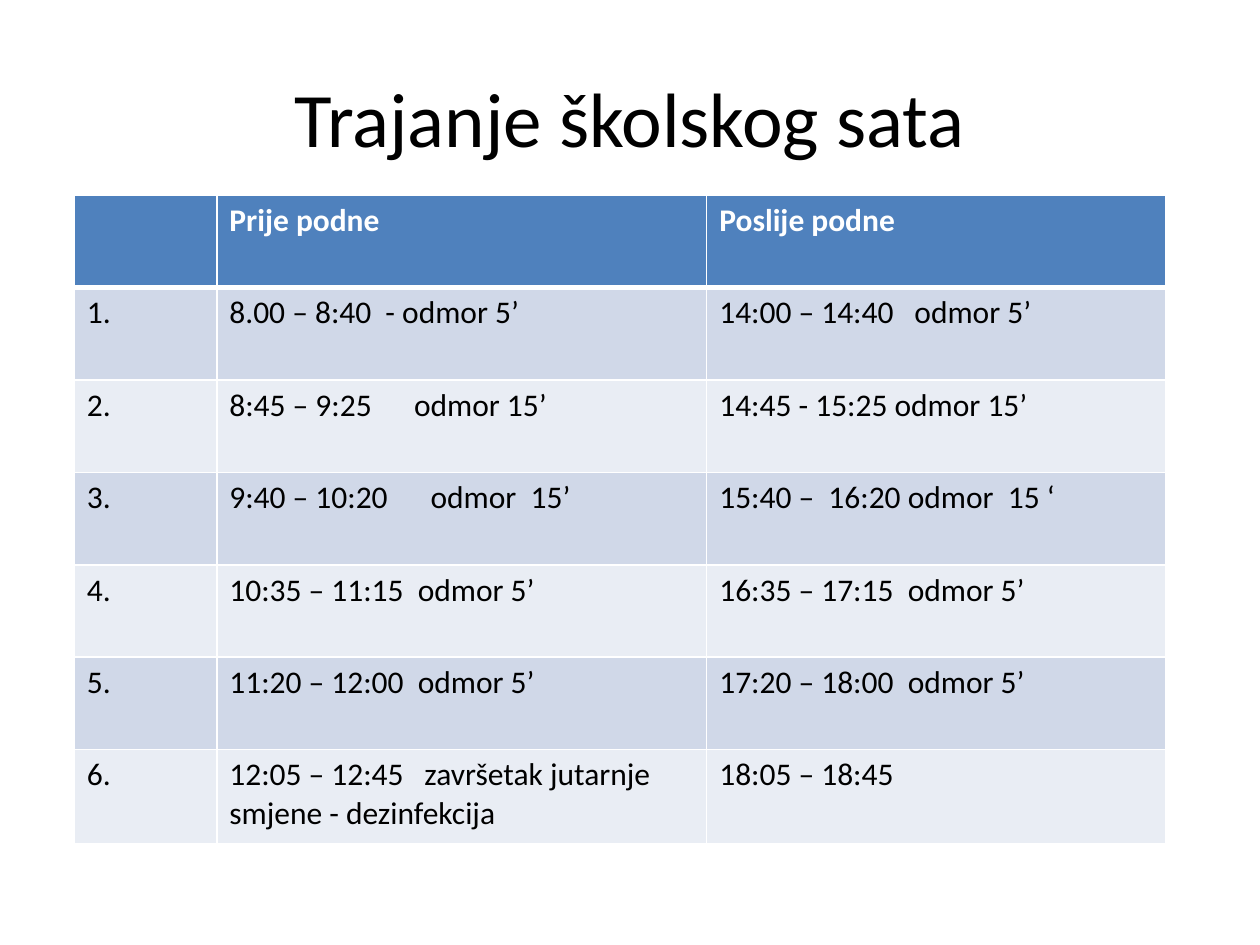
from lxml.etree import SubElement as Sub
from pptx import Presentation as Deck
from pptx.dml.color import RGBColor as Rgb
from pptx.enum.text import MSO_ANCHOR as Anchor, PP_ALIGN as Align
from pptx.oxml.ns import qn
from pptx.util import Pt

FONT = "Calibri"
BLACK, WHITE, BLUE = "000000", "FFFFFF", "4F81BD"
BANDS = ("D0D8E8", "E9EDF4")
WIDTHS = (81.4, 280, 262.6)
HIGH, LAST = 52.8, 54
ROWS = (
    ("", "Prije podne", "Poslije podne"),
    ("1.", "8.00 – 8:40  - odmor 5’", "14:00 – 14:40\todmor 5’"),
    ("2.", "8:45 – 9:25\todmor 15’", "14:45 - 15:25 odmor 15’"),
    ("3.", "9:40 – 10:20\todmor  15’", "15:40 –  16:20 odmor  15 ‘"),
    ("4.", "10:35 – 11:15  odmor 5’", "16:35 – 17:15  odmor 5’"),
    ("5.", "11:20 – 12:00  odmor 5’", "17:20 – 18:00  odmor 5’"),
    ("6.", "12:05 – 12:45\tzavršetak jutarnje smjene - dezinfekcija",
     "18:05 – 18:45"),
)
STOPS = {(1, 2): 111.5, (2, 1): 105.5, (3, 1): 115, (6, 1): 111.5}


def color(code):
    return Rgb.from_string(code)


def write(frame, text, size, code, bold=False):
    frame.text = text
    para = frame.paragraphs[0]
    for font in [para.font] + [run.font for run in para.runs]:
        font.name, font.size, font.bold = FONT, Pt(size), bold
        font.color.rgb = color(code)
    return para


def add_stop(para, pos):
    stops = Sub(para._p.get_or_add_pPr(), qn("a:tabLst"))
    Sub(stops, qn("a:tab"), pos=str(Pt(pos)), algn="l")


def edge(cell, side, width):
    line = Sub(cell._tc.get_or_add_tcPr(), qn("a:ln" + side), w=str(Pt(width)))
    fill = Sub(line, qn("a:solidFill"))
    Sub(fill, qn("a:srgbClr"), val=WHITE)


def style(cell, row):
    for side in "LRTB":
        thick = (row, side) in ((0, "B"), (1, "T"))
        edge(cell, side, 3 if thick else 1)
    cell.fill.solid()
    cell.fill.fore_color.rgb = color(BANDS[(row - 1) % 2] if row else BLUE)


def add_title(slide, text):
    box = slide.shapes.add_textbox(Pt(36), Pt(21.6), Pt(648), Pt(90))
    frame = box.text_frame
    frame.word_wrap = True
    frame.vertical_anchor = Anchor.MIDDLE
    write(frame, text, 44, BLACK).alignment = Align.CENTER


def add_times(slide):
    high = HIGH * (len(ROWS) - 1) + LAST
    shape = slide.shapes.add_table(len(ROWS), len(WIDTHS), Pt(42.5), Pt(111.6),
                                   Pt(sum(WIDTHS)), Pt(high))
    table = shape.table
    for col, width in zip(table.columns, WIDTHS):
        col.width = Pt(width)
    for row, texts in enumerate(ROWS):
        table.rows[row].height = Pt(LAST if row == len(ROWS) - 1 else HIGH)
        for col, text in enumerate(texts):
            cell = table.cell(row, col)
            style(cell, row)
            head = row == 0
            para = write(cell.text_frame, text, 18, WHITE if head else BLACK, head)
            if (row, col) in STOPS:
                para.alignment = Align.LEFT
                for old in para._p.pPr.findall(qn("a:defRPr")):
                    para._p.pPr.remove(old)
                add_stop(para, STOPS[row, col])


def main():
    deck = Deck()
    deck.slide_width, deck.slide_height = Pt(720), Pt(540)
    slide = deck.slides.add_slide(deck.slide_layouts[6])
    add_title(slide, "Trajanje školskog sata")
    add_times(slide)
    deck.save("out.pptx")


if __name__ == "__main__":
    main()
